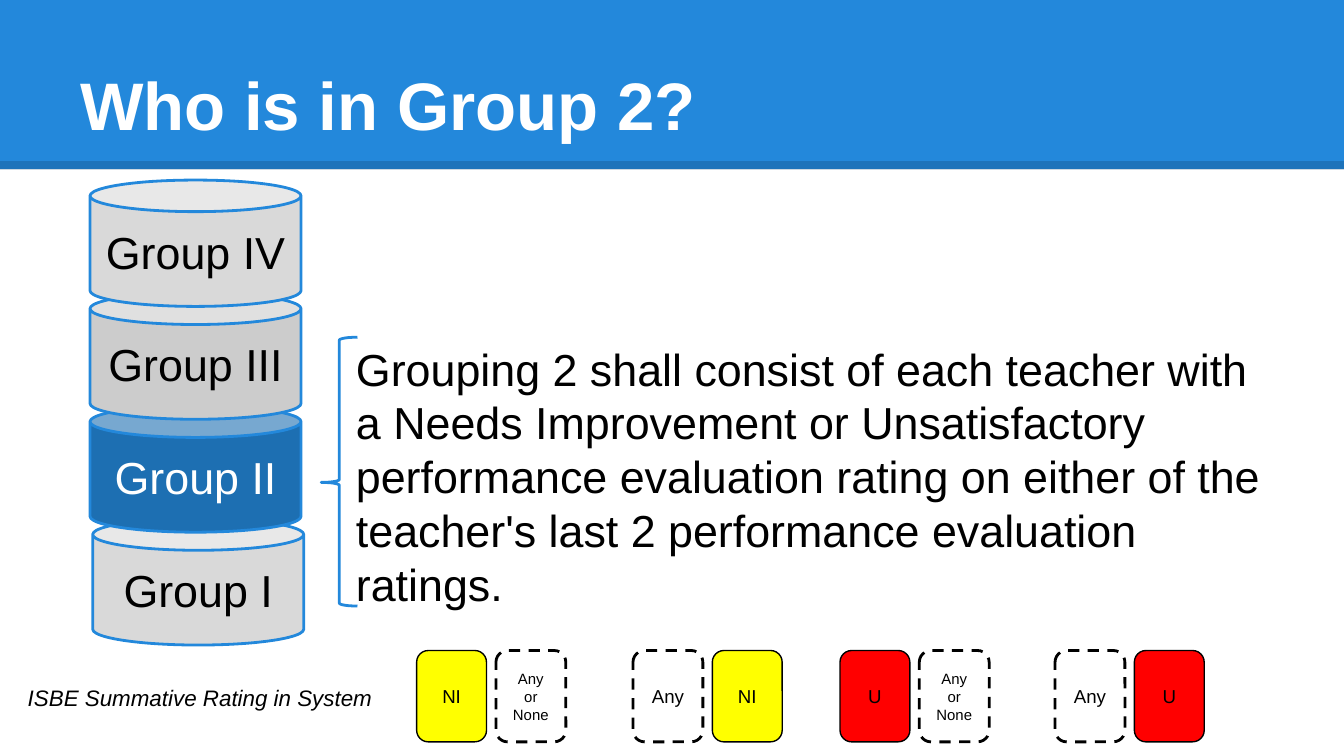
"""Build the slide that explains which teachers are in Group 2."""
from lxml import etree
from pptx import Presentation
from pptx.dml.color import RGBColor
from pptx.enum.dml import MSO_LINE
from pptx.enum.shapes import MSO_CONNECTOR, MSO_SHAPE
from pptx.enum.text import MSO_ANCHOR, PP_ALIGN
from pptx.oxml.ns import qn
from pptx.util import Inches, Pt

RECTANGLE, ROUNDED = MSO_SHAPE.RECTANGLE, MSO_SHAPE.ROUNDED_RECTANGLE
CAN, BRACE = MSO_SHAPE.CAN, MSO_SHAPE.LEFT_BRACE
STRAIGHT, DASH = MSO_CONNECTOR.STRAIGHT, MSO_LINE.DASH
LEFT, CENTER, RIGHT = PP_ALIGN.LEFT, PP_ALIGN.CENTER, PP_ALIGN.RIGHT
MIDDLE, BOTTOM = MSO_ANCHOR.MIDDLE, MSO_ANCHOR.BOTTOM

SLIDE_WIDTH = 10
SLIDE_HEIGHT = SLIDE_WIDTH * 9 / 16
FONT = "Arial"
BLUE, DARK_BLUE = "2388DB", "1D6FB2"
BLACK, WHITE = "000000", "FFFFFF"
YELLOW, RED = "FFFF00", "FF0000"

TITLE = "Who is in Group 2?"
BODY = ("Grouping 2 shall consist of each teacher with a Needs Improvement or "
        "Unsatisfactory performance evaluation rating on either of the "
        "teacher's last 2 performance evaluation ratings.")
CAPTION = "ISBE Summative Rating in System"

# label, left, fill, fill opacity in percent, text colour; bottom to top
GROUPS = [
    ("Group I", 0.69, BLACK, 15, BLACK),
    ("Group II", 0.67, DARK_BLUE, 100, WHITE),
    ("Group III", 0.67, "CCCCCC", 100, BLACK),
    ("Group IV", 0.67, "D9D9D9", 100, BLACK),
]
GROUP_BOTTOM_TOP, GROUP_STEP = 3.86, 0.84
GROUP_WIDTH, GROUP_HEIGHT = 1.57, 0.94

RATING_PAIRS = [
    (3.1, ("NI", "Any or None")),
    (4.71, ("Any", "NI")),
    (6.25, ("U", "Any or None")),
    (7.85, ("Any", "U")),
]
RATING_FILLS = {"NI": YELLOW, "U": RED}
RATING_TOP, RATING_STEP = 4.84, 0.59
RATING_WIDTH, RATING_HEIGHT = 0.52, 0.68


def color(value):
    return RGBColor.from_string(value)


def set_opacity(fill_parent, percent):
    rgb = next(fill_parent.iter(qn("a:srgbClr")))
    etree.SubElement(rgb, qn("a:alpha"), val=str(percent * 1000))


def write(shape, text, size, text_color=BLACK, align=LEFT, anchor=MIDDLE):
    frame = shape.text_frame
    frame.word_wrap = True
    frame.vertical_anchor = anchor
    frame.margin_left = frame.margin_right = Inches(0.1)
    frame.margin_top = frame.margin_bottom = Inches(0.1)
    frame.text = text
    paragraph = frame.paragraphs[0]
    paragraph.alignment = align
    font = paragraph.runs[0].font
    font.name, font.size = FONT, Pt(size)
    font.color.rgb = color(text_color)
    return paragraph


def add_text(slide, box, *args, **options):
    shape = slide.shapes.add_textbox(*map(Inches, box))
    return write(shape, *args, **options)


def add_shape(slide, kind, box, fill=None, line=None, width=1.5):
    shape = slide.shapes.add_shape(kind, *map(Inches, box))
    shape.shadow.inherit = False
    if fill:
        shape.fill.solid()
        shape.fill.fore_color.rgb = color(fill)
    else:
        shape.fill.background()
    if line:
        shape.line.color.rgb = color(line)
        shape.line.width = Pt(width)
    else:
        shape.line.fill.background()
    return shape


def add_header(slide):
    add_shape(slide, RECTANGLE, (0, 0, SLIDE_WIDTH, 1.26), BLUE)
    rule = slide.shapes.add_connector(
        STRAIGHT, Inches(0), Inches(1.23), Inches(SLIDE_WIDTH), Inches(1.23))
    rule.line.color.rgb = color(BLACK)
    rule.line.width = Pt(4.5)
    properties = rule._element.spPr
    set_opacity(properties, 15)
    etree.SubElement(properties, qn("a:effectLst"))
    title = add_text(slide, (0.5, 0.23, 9, 0.94), TITLE, 36, WHITE, anchor=BOTTOM)
    title.runs[0].font.bold = True


def add_groups(slide):
    for index, (label, left, fill, opacity, text_color) in enumerate(GROUPS):
        top = GROUP_BOTTOM_TOP - index * GROUP_STEP
        can = add_shape(slide, CAN, (left, top, GROUP_WIDTH, GROUP_HEIGHT), fill, BLUE)
        can.adjustments[0] = 0.25
        if opacity < 100:
            set_opacity(can._element.spPr, opacity)
        write(can, label, 24, text_color, CENTER)


def add_ratings(slide):
    for pair_left, labels in RATING_PAIRS:
        for index, label in enumerate(labels):
            rated = label in RATING_FILLS
            box = (pair_left + index * RATING_STEP, RATING_TOP,
                   RATING_WIDTH, RATING_HEIGHT)
            card = add_shape(slide, ROUNDED, box, RATING_FILLS.get(label, WHITE),
                             BLACK, 0.75 if rated else 1.5)
            if not rated:
                card.line.dash_style = DASH
            write(card, label, 8 if "None" in label else 10, align=CENTER)


def main():
    presentation = Presentation()
    presentation.slide_width = Inches(SLIDE_WIDTH)
    presentation.slide_height = Inches(SLIDE_HEIGHT)
    slide = presentation.slides.add_slide(presentation.slide_layouts[6])

    add_header(slide)
    add_text(slide, (2.55, 2.42, 6.95, 2.22), BODY, 24, anchor=BOTTOM)
    add_groups(slide)
    brace = add_shape(slide, BRACE, (2.39, 2.51, 0.27, 2), line=BLUE)
    brace.adjustments[0], brace.adjustments[1] = 0.08, 0.54
    add_ratings(slide)
    caption = add_text(slide, (0.08, 4.94, 2.79, 0.5), CAPTION, 12, align=RIGHT)
    caption.runs[0].font.italic = True

    presentation.save("out.pptx")


if __name__ == "__main__":
    main()
